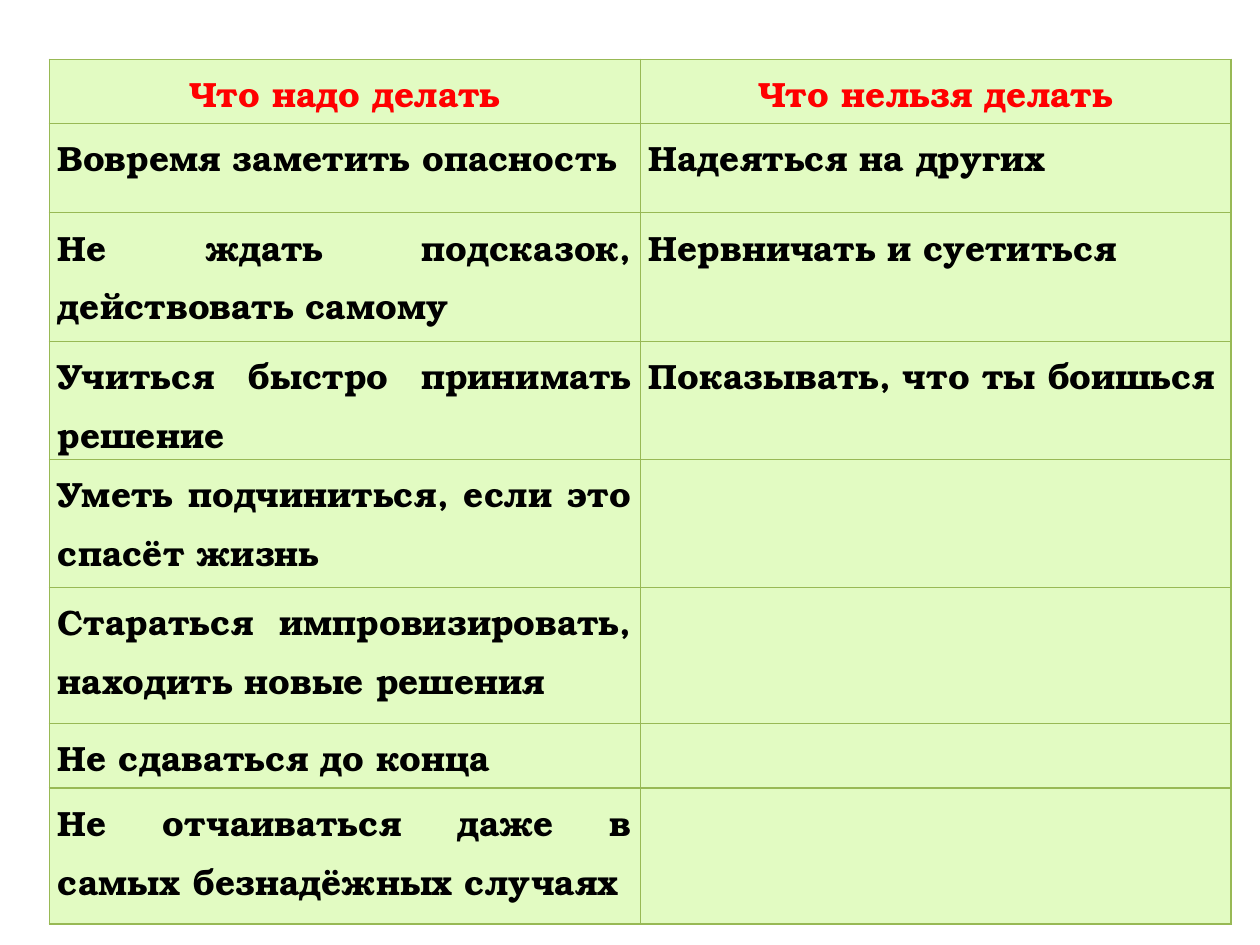
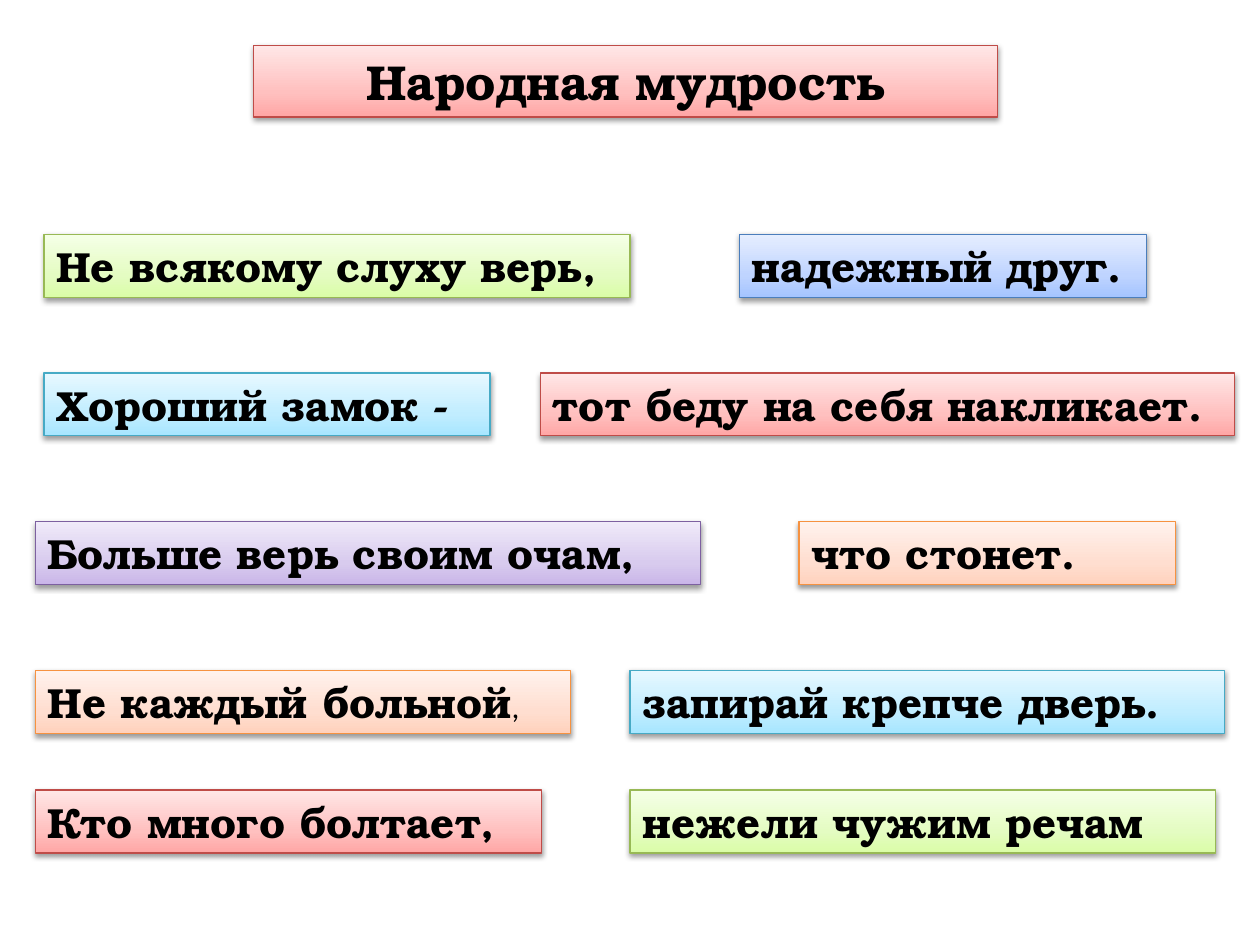
import copy
from dataclasses import dataclass
from itertools import zip_longest

import pptx
import pptx.dml.color
import pptx.enum.shapes
import pptx.enum.text
import pptx.oxml
import pptx.oxml.ns
import pptx.util

Inches, Pt = pptx.util.Inches, pptx.util.Pt
RGB = pptx.dml.color.RGBColor.from_string
ALIGN = pptx.enum.text.PP_ALIGN
ANCHOR = pptx.enum.text.MSO_ANCHOR
qn = pptx.oxml.ns.qn


@dataclass(frozen=True)
class Theme:
    font: str = "TeX Gyre Bonum"
    plain_font: str = "Calibri"
    text: str = "000000"
    heading: str = "FF0000"
    cell: str = "E2FBC2"
    border: str = "98B955"
    line_width: float = 0.75
    table_size: int = 20
    plain_size: int = 18
    card_size: int = 24
    title_size: int = 28


THEME = Theme()

# Card colours: line, then gradient stops from bottom to top
CARD_COLOURS = {
    "green": ("98B955", "DAFDA7", "E4FCC2", "F5FFE7"),
    "blue": ("4B7EBC", "A4C4FF", "BFD4FF", "E6EEFF"),
    "aqua": ("46AAC5", "A7E6FF", "C1EDFF", "E7F8FF"),
    "red": ("BF4C48", "FFA6A5", "FFC0BF", "FFE7E7"),
    "purple": ("7D60A0", "C9B5E8", "D8CBEE", "F0EAF9"),
    "orange": ("F69240", "FFD2BD", "FFDED0", "FFF2ED"),
}
STOP_POSITIONS = (0, 0.35, 1)

HEADINGS = ("Что надо делать", "Что нельзя делать")
TO_DO = (
    "Вовремя заметить опасность",
    "Не ждать подсказок, действовать самому",
    "Учиться быстро принимать решение",
    "Уметь подчиниться, если это спасёт жизнь",
    "Стараться импровизировать, находить новые решения",
    "Не сдаваться до конца",
    "Не отчаиваться даже в самых безнадёжных случаях",
)
NOT_TO_DO = (
    "Надеяться на других",
    "Нервничать и суетиться",
    "Показывать, что ты боишься",
)
ROW_HEIGHTS = (0.51, 0.71, 1.02, 0.71, 1.02, 1.08, 0.51, 1.08)

# Proverb halves: top, then (left, width, colour, text) for each card
PROVERB_ROWS = (
    (1.86, (0.35, 4.65, "green", "Не всякому слуху верь,"),
           (5.87, 3.23, "blue", "надежный друг.")),
    (2.96, (0.35, 3.54, "aqua", "Хороший замок -"),
           (4.29, 5.51, "red", "тот беду на себя накликает.")),
    (4.14, (0.28, 5.28, "purple", "Больше верь своим очам,"),
           (6.34, 2.99, "orange", "что стонет.")),
    (5.32, (0.28, 4.25, "orange", "Не каждый больной"),
           (5, 4.72, "aqua", "запирай крепче дверь.")),
    (6.27, (0.28, 4.02, "red", "Кто много болтает,"),
           (5, 4.65, "green", "нежели чужим речам")),
)


def add_run(p, text, size, color=THEME.text, name=THEME.font, bold=True):
    r = p.add_run()
    r.text = text
    for key, value in {"size": Pt(size), "name": name, "bold": bold}.items():
        setattr(r.font, key, value)
    r.font.color.rgb = RGB(color)


def add_borders(cell):
    tcPr = cell._tc.get_or_add_tcPr()
    for i, side in enumerate("LRTB"):
        tcPr.insert(i, pptx.oxml.parse_xml(
            f'<a:ln{side} {pptx.oxml.ns.nsdecls("a")} w="{Pt(THEME.line_width)}">'
            f'<a:solidFill><a:srgbClr val="{THEME.border}"/></a:solidFill>'
            f'</a:ln{side}>'))


def fill_cell(cell, text, is_heading):
    margins = {"margin_left": 0.07, "margin_right": 0.07,
               "margin_top": 0, "margin_bottom": 0}
    for key, value in margins.items():
        setattr(cell, key, Inches(value))
    cell.fill.solid()
    cell.fill.fore_color.rgb = RGB(THEME.cell)
    add_borders(cell)
    if text:
        p = cell.text_frame.paragraphs[0]
        p.alignment = ALIGN.CENTER if is_heading else ALIGN.JUSTIFY
        p.line_spacing = 1.15
        add_run(p, text, THEME.table_size,
                THEME.heading if is_heading else THEME.text)


def add_advice_table(s):
    rows = [HEADINGS, *zip_longest(TO_DO, NOT_TO_DO, fillvalue="")]
    frame = s.shapes.add_table(len(rows), 2, Inches(0.39), Inches(0.47),
                               Inches(9.38), Inches(6.69))
    table = frame.table
    table.horz_banding = False
    for i, (texts, height) in enumerate(zip(rows, ROW_HEIGHTS)):
        table.rows[i].height = Inches(height)
        for j, text in enumerate(texts):
            fill_cell(table.cell(i, j), text, is_heading=i == 0)
    frame.height = Inches(6.69)


def add_gradient(sp, colors):
    sp.fill.gradient()
    stops = sp._element.spPr.find(".//" + qn("a:gsLst"))
    stops.append(copy.deepcopy(stops[0]))
    for stop, position, color in zip(sp.fill.gradient_stops,
                                     STOP_POSITIONS, colors):
        stop.position = position
        stop.color.rgb = RGB(color)
    sp.fill.gradient_angle = 90


def add_shadow(sp):
    sp.shadow.inherit = False
    sp._element.spPr.find(qn("a:effectLst")).append(pptx.oxml.parse_xml(
        f'<a:outerShdw {pptx.oxml.ns.nsdecls("a")} blurRad="{Pt(3.1)}" '
        f'dist="{Pt(1.6)}" dir="5400000" rotWithShape="0">'
        '<a:srgbClr val="000000"><a:alpha val="38000"/></a:srgbClr>'
        '</a:outerShdw>'))


def add_card(s, left, top, width, colour, text, height=0.5,
             size=THEME.card_size, align=ALIGN.LEFT):
    sp = s.shapes.add_shape(pptx.enum.shapes.MSO_SHAPE.RECTANGLE,
                            *map(Inches, (left, top, width, height)))
    line, *stops = CARD_COLOURS[colour]
    add_gradient(sp, stops)
    sp.line.color.rgb = RGB(line)
    sp.line.width = Pt(THEME.line_width)
    add_shadow(sp)
    tf = sp.text_frame
    frame_format = {"word_wrap": True, "vertical_anchor": ANCHOR.TOP,
                    "auto_size": pptx.enum.text.MSO_AUTO_SIZE.SHAPE_TO_FIT_TEXT}
    for key, value in frame_format.items():
        setattr(tf, key, value)
    p = tf.paragraphs[0]
    p.alignment = align
    add_run(p, text, size)
    return p


def add_proverbs(s):
    add_card(s, 2.01, 0.36, 5.91, "red", "Народная мудрость",
             height=0.57, size=THEME.title_size, align=ALIGN.CENTER)
    for top, *cards in PROVERB_ROWS:
        for left, width, colour, text in cards:
            p = add_card(s, left, top, width, colour, text)
            if text == "Не каждый больной":
                # The comma here is set in small plain type
                add_run(p, ",", THEME.plain_size, name=THEME.plain_font,
                        bold=False)


def main():
    prs = pptx.Presentation()
    prs.slide_width, prs.slide_height = Inches(10), Inches(7.5)
    for add_content in (add_advice_table, add_proverbs):
        add_content(prs.slides.add_slide(prs.slide_layouts[6]))
    prs.save("out.pptx")


if __name__ == "__main__":
    main()
